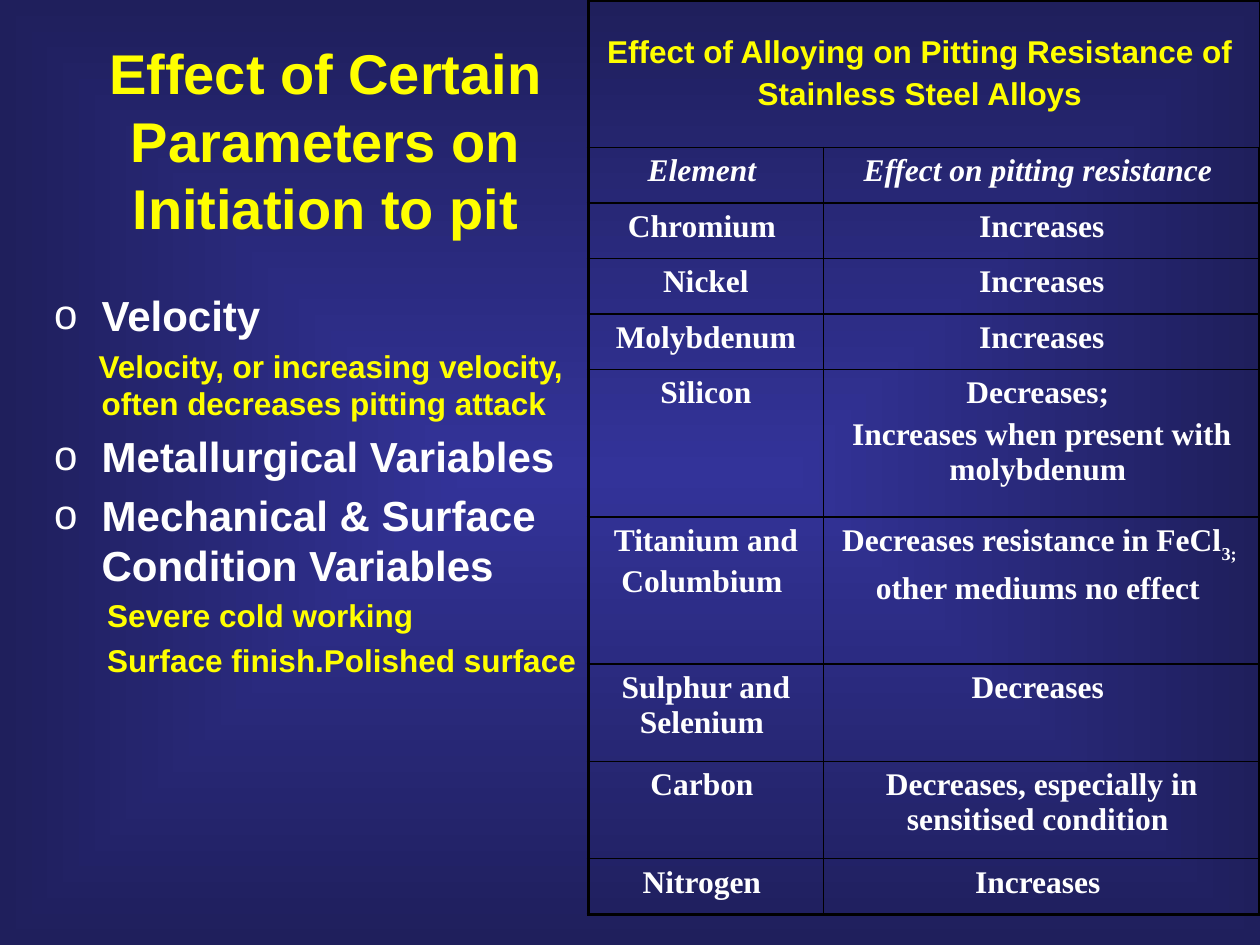
from lxml import etree
from pptx import Presentation
from pptx.dml.color import RGBColor
from pptx.enum import text
from pptx.oxml import parse_xml
from pptx.oxml.ns import nsdecls, qn
from pptx.util import Cm, Pt

YELLOW = RGBColor(0xFF, 0xFF, 0x00)
WHITE = RGBColor(0xFF, 0xFF, 0xFF)
BLACK = RGBColor(0x00, 0x00, 0x00)
CENTRE_BLUE = RGBColor(0x33, 0x33, 0x99)
EDGE_BLUE = RGBColor(0x1F, 0x1F, 0x5C)

SANS = "Arial"
SERIF = "Times New Roman"
THIN, THICK = 1, 2.25

POINTS = [
    ("Velocity", True, 0.96, -0.96),
    ("Velocity, or increasing velocity, often decreases pitting attack", False, 0.96, -0.06),
    ("Metallurgical Variables", True, 0.96, -0.96),
    ("Mechanical & Surface Condition Variables", True, 0.96, -0.96),
    ("Severe cold working", False, 1.07, 0),
    ("Surface finish.Polished surface", False, 1.07, 0),
]

HEADING = ["Effect of Alloying on Pitting Resistance of ", "Stainless Steel Alloys "]
ROWS = [
    (1.12, ["Element "], ["Effect on pitting resistance "]),
    (1.12, ["Chromium "], ["Increases"]),
    (1.12, ["Nickel"], ["Increases"]),
    (1.12, ["Molybdenum"], ["Increases"]),
    (2.97, ["Silicon"], ["Decreases; ", "Increases when present with molybdenum "]),
    (2.97, ["Titanium and", "Columbium "],
     [("Decreases resistance in FeCl", "3; "), "other mediums no effect "]),
    (1.96, ["Sulphur and Selenium "], ["Decreases "]),
    (1.96, ["Carbon "], ["Decreases, especially in sensitised condition "]),
    (1.12, ["Nitrogen "], ["Increases "]),
]


def add_span(para, words, size, color, font=SANS, italic=False):
    span = para.add_run()
    span.text = words
    span.font.name = font
    span.font.size = Pt(size)
    span.font.bold = True
    span.font.italic = italic
    span.font.color.rgb = color
    return span


def next_para(frame, index):
    return frame.paragraphs[0] if index == 0 else frame.add_paragraph()


def paint_background(page):
    page.background.fill.solid()
    properties = page.background._cSld.bg.bgPr
    properties.replace(properties[0], parse_xml(
        f'<a:gradFill {nsdecls("a")} rotWithShape="0"><a:gsLst>'
        f'<a:gs pos="0"><a:srgbClr val="{CENTRE_BLUE}"/></a:gs>'
        f'<a:gs pos="100000"><a:srgbClr val="{EDGE_BLUE}"/></a:gs></a:gsLst>'
        '<a:path path="rect"><a:fillToRect l="50000" t="50000" r="50000" b="50000"/>'
        '</a:path></a:gradFill>'))


def add_title(page, left, top, width, height):
    frame = page.shapes.add_textbox(left, top, width, height).text_frame
    frame.word_wrap = True
    frame.vertical_anchor = text.MSO_ANCHOR.MIDDLE
    para = frame.paragraphs[0]
    para.alignment = text.PP_ALIGN.CENTER
    add_span(para, "Effect of Certain Parameters on Initiation to pit", 32, YELLOW)


def add_bullet(properties):
    color = etree.SubElement(properties, qn("a:buClr"))
    etree.SubElement(color, qn("a:srgbClr"), val=str(WHITE))
    etree.SubElement(properties, qn("a:buFont"), typeface=SANS)
    etree.SubElement(properties, qn("a:buChar"), char="o")


def add_points(page, left, top, width, height):
    frame = page.shapes.add_textbox(left, top, width, height).text_frame
    frame.word_wrap = True
    for index, (words, is_main, margin, indent) in enumerate(POINTS):
        size, color = (24, WHITE) if is_main else (18, YELLOW)
        para = next_para(frame, index)
        para.space_before = Pt(size * 0.2)
        properties = para._p.get_or_add_pPr()
        properties.set("marL", str(Cm(margin)))
        properties.set("indent", str(Cm(indent)))
        if is_main:
            add_bullet(properties)
        add_span(para, words, size, color)


def set_borders(cell, **weights):
    properties = cell._tc.get_or_add_tcPr()
    for place, side in enumerate("LRTB"):
        line = parse_xml(
            f'<a:ln{side} {nsdecls("a")} w="{Pt(weights.get(side, THIN))}">'
            f'<a:solidFill><a:srgbClr val="{BLACK}"/></a:solidFill></a:ln{side}>')
        properties.insert(place, line)


def fill_cell(cell, lines, color=WHITE, font=SERIF, italic=False):
    for index, line in enumerate(lines):
        para = next_para(cell.text_frame, index)
        para.alignment = text.PP_ALIGN.CENTER
        para.space_before = Pt(3.6)
        main, *subscripts = [line] if isinstance(line, str) else line
        add_span(para, main, 18, color, font, italic)
        for words in subscripts:
            span = add_span(para, words, 18, color, font, italic)
            span.font._element.set("baseline", "-30000")


def add_alloy_table(page, left, top, width, height):
    table = page.shapes.add_table(len(ROWS) + 1, 2, left, top, width, height).table
    table.first_row = False
    table.horz_banding = False
    table.columns[0].width = Cm(4.74)
    table.columns[1].width = width - Cm(4.74)
    for row, row_height in zip(table.rows, [2.97] + [entry[0] for entry in ROWS]):
        row.height = Cm(row_height)

    last = len(ROWS)
    for index in range(last + 1):
        top_weight = THICK if index == 0 else THIN
        bottom_weight = THICK if index == last else THIN
        for column, outer in enumerate("LR"):
            cell = table.cell(index, column)
            cell.fill.background()
            set_borders(cell, T=top_weight, B=bottom_weight, **{outer: THICK})

    heading = table.cell(0, 0)
    heading.merge(table.cell(0, 1))
    heading.vertical_anchor = text.MSO_ANCHOR.MIDDLE
    fill_cell(heading, HEADING, YELLOW, SANS)
    for index, (_, element, effect) in enumerate(ROWS, 1):
        for column, lines in enumerate((element, effect)):
            fill_cell(table.cell(index, column), lines, italic=index == 1)


def main():
    deck = Presentation()
    deck.slide_width, deck.slide_height = Cm(25.4), Cm(19.05)
    page = deck.slides.add_slide(deck.slide_layouts[6])
    paint_background(page)
    add_title(page, Cm(1.27), Cm(0.76), Cm(10.59), Cm(4.11))
    add_points(page, Cm(0.84), Cm(5.72), Cm(11.23), Cm(9.09))
    add_alloy_table(page, Cm(11.86), Cm(0), Cm(13.54), Cm(18.42))
    deck.save("out.pptx")


if __name__ == "__main__":
    main()
